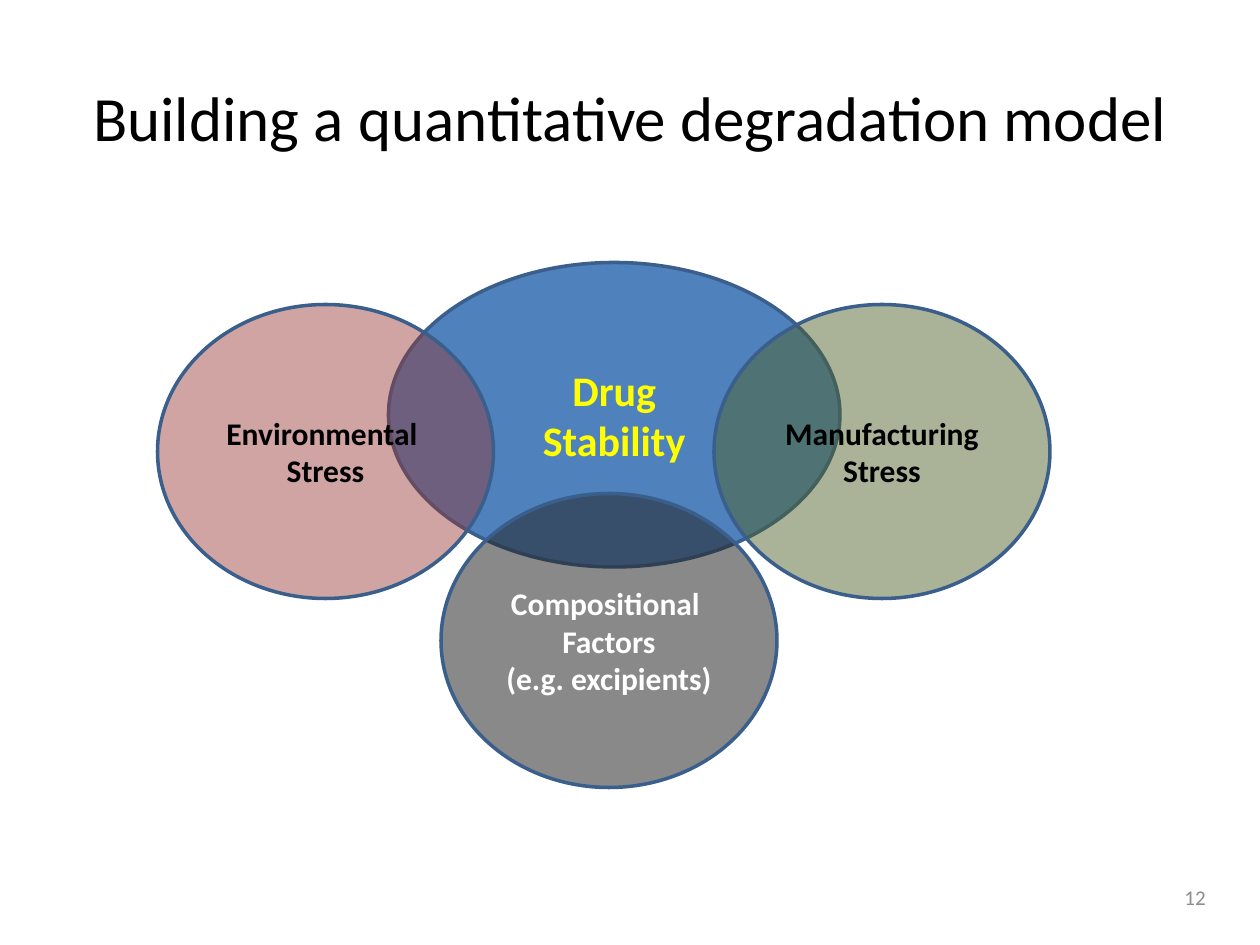
from pptx import Presentation
from pptx.dml.color import RGBColor
from pptx.enum.shapes import MSO_SHAPE
from pptx.enum.text import MSO_ANCHOR, PP_ALIGN
from pptx.oxml.ns import qn
from pptx.util import Inches, Pt
from lxml.etree import SubElement

# Grid: 120 columns by 90 rows of 1/12 inch
prs = Presentation()
prs.slide_width, prs.slide_height = Inches(10), Inches(7.5)
COL, ROW = prs.slide_width / 120, prs.slide_height / 90
slide = prs.slides.add_slide(prs.slide_layouts[6])


def place(col, row, cols, rows):
    return [round(n) for n in (col * COL, row * ROW, cols * COL, rows * ROW)]


def write(sp, text, size, color, bold=False, align=PP_ALIGN.CENTER):
    tf = sp.text_frame
    tf.text = text
    tf.word_wrap = True
    tf.vertical_anchor = MSO_ANCHOR.MIDDLE
    for p in tf.paragraphs:
        p.alignment = align
        for r in p.runs:
            r.font.name = "Calibri"
            r.font.size = Pt(size)
            r.font.bold = bold
            r.font.color.rgb = RGBColor.from_string(color)


# Title and slide number
title = slide.shapes.add_textbox(*place(6, 3.6, 108, 15))
write(title, "Building a quantitative degradation model", 36, "000000")
number = slide.shapes.add_textbox(*place(88, 83, 28, 4.8))
write(number, "12", 12, "8C8C8C", align=PP_ALIGN.RIGHT)

# Overlapping ellipses, back to front:
# column, row, columns, rows, fill, opacity %, text, size, text colour
ellipses = [
    (37, 25, 43, 29, "4F81BD", 100, "Drug\nStability", 24, "FFFF00"),
    (42, 47, 32, 28, "262626", 54,
     "Compositional \nFactors\n(e.g. excipients)", 18, "FFFFFF"),
    (15, 29, 32, 28, "953735", 45, "Environmental \nStress", 18, "000000"),
    (68, 29, 32, 28, "4F6228", 48, "Manufacturing\nStress", 18, "000000"),
]
for col, row, cols, rows, fill, opacity, text, size, color in ellipses:
    sp = slide.shapes.add_shape(MSO_SHAPE.OVAL, *place(col, row, cols, rows))
    sp.shadow.inherit = False
    sp.fill.solid()
    sp.fill.fore_color.rgb = RGBColor.from_string(fill)
    if opacity < 100:
        rgb = sp.fill._xPr.find(qn("a:solidFill")).find(qn("a:srgbClr"))
        SubElement(rgb, qn("a:alpha")).set("val", str(opacity * 1000))
    sp.line.color.rgb = RGBColor.from_string("3A5F8C")
    sp.line.width = Pt(2)
    write(sp, text, size, color, bold=True)

prs.save("out.pptx")
